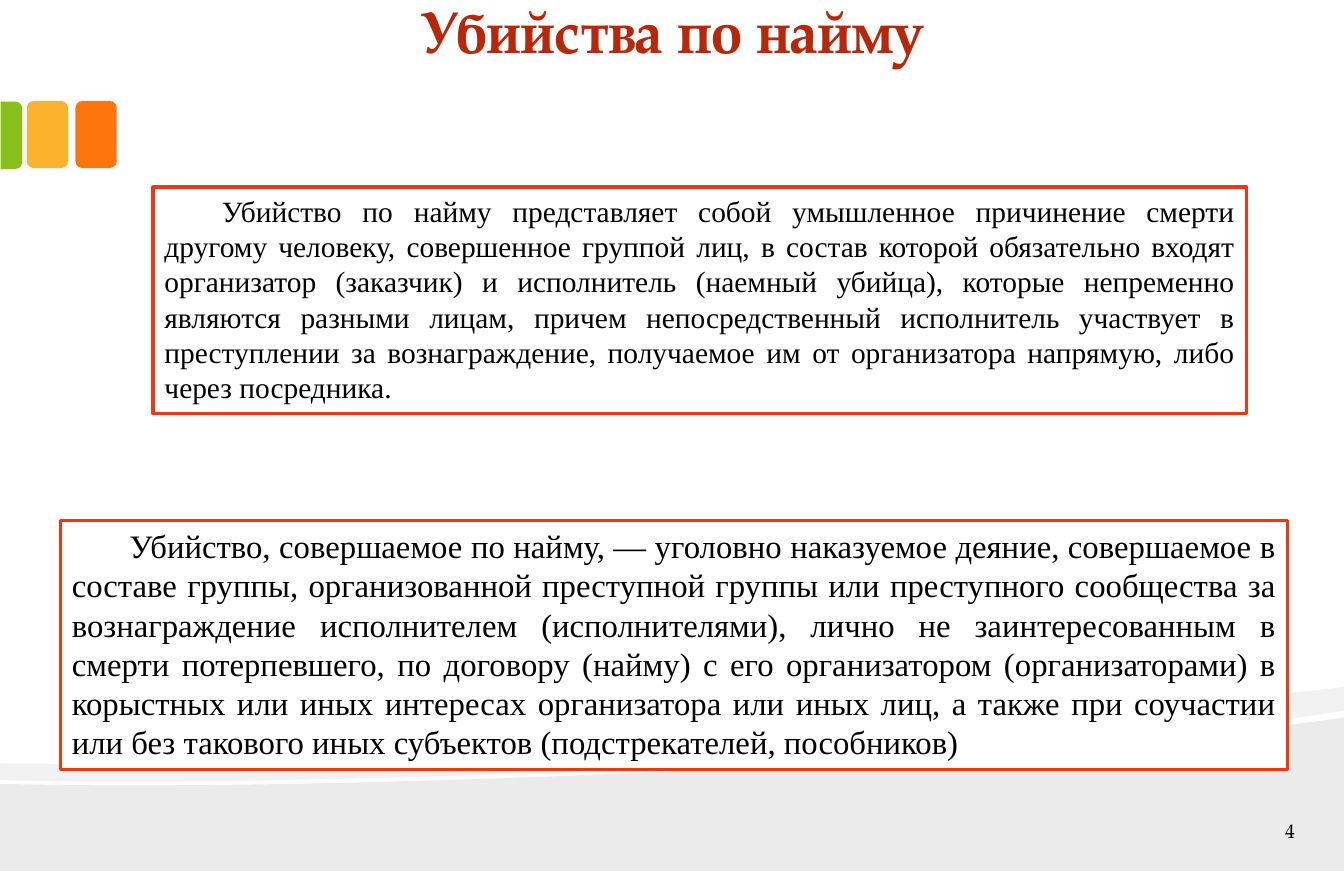
from dataclasses import dataclass

import pptx
import pptx.dml.color
import pptx.enum.shapes
import pptx.enum.text
import pptx.util

Cm = pptx.util.Cm
Pt = pptx.util.Pt
RGB = pptx.dml.color.RGBColor
Kind = pptx.enum.shapes.MSO_SHAPE
Align = pptx.enum.text.PP_ALIGN
Anchor = pptx.enum.text.MSO_ANCHOR

WHITE = RGB(0xFF, 0xFF, 0xFF)
BLACK = RGB(0x00, 0x00, 0x00)
RED = RGB(0xB8, 0x27, 0x0A)
BORDER = RGB(0xF2, 0x36, 0x10)
ORANGE = RGB(0xFE, 0x75, 0x0E)
YELLOW = RGB(0xFC, 0xB2, 0x2C)
GREEN = RGB(0x89, 0xC0, 0x1C)
GREY = RGB(0xEB, 0xEB, 0xEB)
PALE = RGB(0xF2, 0xF2, 0xF2)

SERIF = "Times New Roman"
PAGELLA = "TeX Gyre Pagella"
WIDTH, HEIGHT = 29.0, 18.8
STEPS = 24

Point = tuple[float, float]
Area = tuple[float, float, float, float]


@dataclass
class Tab:
    area: Area
    color: RGB
    kind: Kind = Kind.ROUNDED_RECTANGLE
    turn: float = 0


@dataclass
class Panel:
    area: Area
    size: int
    text: str


@dataclass
class Label:
    area: Area
    text: str
    size: int
    color: RGB
    bold: bool
    align: Align
    anchor: Anchor


TABS = [
    Tab((1.63, 2.18, 0.89, 1.45), ORANGE),
    Tab((0.58, 2.18, 0.89, 1.45), YELLOW),
    Tab((-0.48, 2.69, 1.45, 0.46), GREEN, Kind.ROUND_2_SAME_RECTANGLE, 90),
]

LABELS = [
    Label((2.9, 0.41, 23.19, 1.19), "Убийства по найму", 36, RED, True,
          Align.CENTER, Anchor.BOTTOM),
    Label((26.34, 17.68, 1.93, 0.51), "4", 12, BLACK, False,
          Align.RIGHT, Anchor.MIDDLE),
]

PANELS = [
    Panel((1.3, 11.23, 26.49, 5.38), 20,
          "Убийство, совершаемое по найму, — уголовно наказуемое деяние, "
          "совершаемое в составе группы, организованной преступной группы "
          "или преступного сообщества за вознаграждение исполнителем "
          "(исполнителями), лично не заинтересованным в смерти потерпевшего, "
          "по договору (найму) с его организатором (организаторами) "
          "в корыстных или иных интересах организатора или иных лиц, "
          "а также при соучастии или без такового иных субъектов "
          "(подстрекателей, пособников)"),
    Panel((3.3, 4.04, 23.6, 4.88), 18,
          "Убийство по найму представляет собой умышленное причинение смерти "
          "другому человеку, совершенное группой лиц, в состав которой "
          "обязательно входят организатор (заказчик) и исполнитель (наемный "
          "убийца), которые непременно являются разными лицам, причем "
          "непосредственный исполнитель участвует в преступлении "
          "за вознаграждение, получаемое им от организатора напрямую, либо "
          "через посредника."),
]


def curve(a: Point, b: Point, c: Point, d: Point) -> list[Point]:
    """Sample a cubic Bezier curve from a to d."""
    def at(t: float, axis: int) -> float:
        s = 1 - t
        return (s**3 * a[axis] + 3 * s * s * t * b[axis]
                + 3 * s * t * t * c[axis] + t**3 * d[axis])

    return [(at(i / STEPS, 0), at(i / STEPS, 1)) for i in range(STEPS + 1)]


def paint(shape, color: RGB) -> None:
    shape.shadow.inherit = False
    shape.fill.solid()
    shape.fill.fore_color.rgb = color
    shape.line.fill.background()


def add_wave(slide, points: list[Point], color: RGB) -> None:
    spots = [(Cm(x), Cm(y)) for x, y in points]
    pen = slide.shapes.build_freeform(*spots[0])
    pen.add_line_segments(spots[1:], close=True)
    paint(pen.convert_to_shape(), color)


def add_tab(slide, tab: Tab) -> None:
    shape = slide.shapes.add_shape(tab.kind, *map(Cm, tab.area))
    paint(shape, tab.color)
    shape.rotation = tab.turn
    if tab.turn:
        shape.adjustments[0] = 0.29


def write(para, text: str, font: str, size: int, color: RGB, bold: bool = False) -> None:
    run = para.add_run()
    run.text = text
    run.font.name = font
    run.font.size = Pt(size)
    run.font.bold = bold
    run.font.color.rgb = color


def add_label(slide, label: Label) -> None:
    frame = slide.shapes.add_textbox(*map(Cm, label.area)).text_frame
    frame.word_wrap = True
    frame.vertical_anchor = label.anchor
    frame.margin_left = frame.margin_right = Cm(0.33)
    frame.margin_top = frame.margin_bottom = Cm(0.18)
    para = frame.paragraphs[0]
    para.alignment = label.align
    write(para, label.text, PAGELLA, label.size, label.color, label.bold)


def add_panel(slide, panel: Panel) -> None:
    shape = slide.shapes.add_shape(Kind.RECTANGLE, *map(Cm, panel.area))
    paint(shape, WHITE)
    shape.line.color.rgb = BORDER
    shape.line.width = Pt(2)
    frame = shape.text_frame
    frame.word_wrap = True
    frame.vertical_anchor = Anchor.TOP
    para = frame.paragraphs[0]
    para.alignment = Align.JUSTIFY
    para._p.get_or_add_pPr().set("indent", str(Cm(1.24)))
    write(para, panel.text, SERIF, panel.size, BLACK)


def main() -> None:
    deck = pptx.Presentation()
    deck.slide_width, deck.slide_height = Cm(WIDTH), Cm(HEIGHT)
    slide = deck.slides.add_slide(deck.slide_layouts[6])

    hill = curve((0, 16.92), (7.65, 17.12), (22.68, 16.41), (WIDTH, 15.49))
    add_wave(slide, [*hill, (WIDTH, HEIGHT), (0, HEIGHT)], GREY)

    crest = curve((0, 16.48), (14.2, 16.61), (21.13, 15.7), (WIDTH, 14.83))
    slope = curve((WIDTH, 15.34), (27.3, 15.62), (24.99, 15.85), (22.38, 16.08))
    base = curve((22.38, 16.08), (15.19, 16.64), (5.61, 16.97), (0, 16.84))
    add_wave(slide, crest + slope + base[1:], PALE)

    for tab in TABS:
        add_tab(slide, tab)
    for label in LABELS:
        add_label(slide, label)
    for panel in PANELS:
        add_panel(slide, panel)
    deck.save("out.pptx")


if __name__ == "__main__":
    main()
